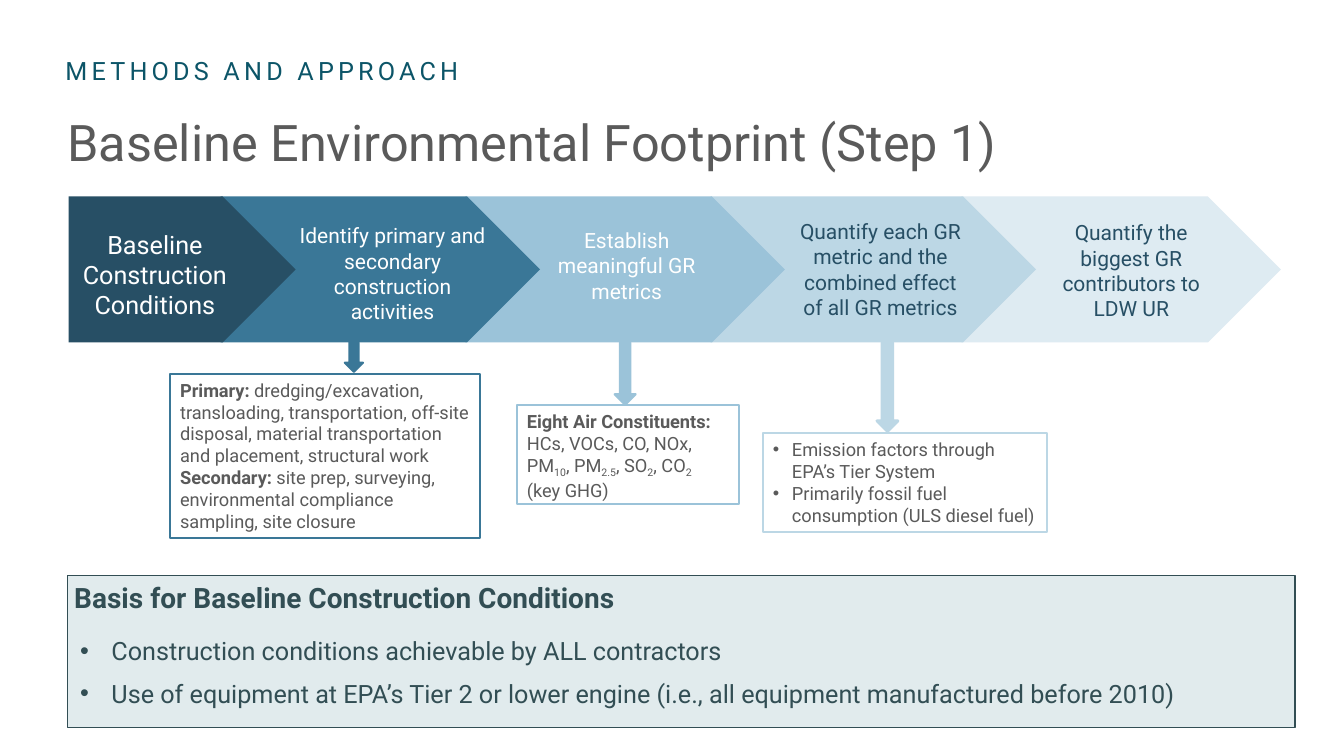
from dataclasses import dataclass

from lxml.etree import SubElement
from pptx import Presentation
from pptx.dml.color import RGBColor
from pptx.enum.shapes import MSO_SHAPE as Shape
from pptx.enum.text import MSO_ANCHOR as Anchor, PP_ALIGN as Align
from pptx.oxml.ns import qn
from pptx.util import Cm, Pt


@dataclass(frozen=True)
class Theme:
    """Colours, type sizes and font of the slide."""
    font: str = "Roboto"
    teal: str = "0C5568"
    grey: str = "5A5A5A"
    white: str = "FFFFFF"
    navy: str = "274F65"
    blue: str = "3A7797"
    sky: str = "9BC3D9"
    mist: str = "BCD7E5"
    ice: str = "DEEBF2"
    slate: str = "324E54"
    panel: str = "E1EBED"
    title: int = 36
    heading: int = 20
    body: int = 18
    step: int = 15
    note: int = 13


THEME = Theme()
SUBSCRIPT = "-25000"
STEP_TOP, STEP_HEIGHT = 4.95, 3.68

STEPS = [
    ("Baseline Construction Conditions", THEME.navy, THEME.white, THEME.body,
     (1.73, 5.72), (1.57, 5.64, 4.67, 2.57)),
    ("Identify primary and secondary construction activities", THEME.blue, THEME.white, THEME.step,
     (5.56, 8.05), (7.24, 5.49, 5.31, 2.82)),
    ("Establish meaningful GR metrics", THEME.sky, THEME.white, THEME.step,
     (11.73, 8.05), (13.23, 5.61, 5.13, 2.18)),
    ("Quantify each GR metric and the combined effect of all GR metrics", THEME.mist, THEME.navy,
     THEME.step, (17.91, 8.2), (19.79, 5.38, 4.8, 2.82)),
    ("Quantify the biggest GR contributors to LDW UR", THEME.ice, THEME.navy, THEME.step,
     (24.23, 8.05), (26.11, 5.41, 4.8, 2.82)),
]

ACTIVITIES = [
    [("Primary: ", "bold"),
     ("dredging/excavation, transloading, transportation, off-site disposal, "
      "material transportation and placement, structural work", "")],
    [("Secondary: ", "bold"),
     ("site prep, surveying, environmental compliance sampling, site closure", "")],
]
CONSTITUENTS = [
    [("Eight Air Constituents:", "bold")],
    [("HCs, VOCs, CO, NOx, PM", ""), ("10", "sub"), (", PM", ""), ("2.5", "sub"),
     (", SO", ""), ("2", "sub"), (", CO", ""), ("2", "sub"), (" (key GHG)", "")],
]
EMISSIONS = [
    [("Emission factors through EPA’s Tier System", "")],
    [("Primarily fossil fuel consumption (ULS diesel fuel)", "")],
]
BASIS = [
    "Construction conditions achievable by ALL contractors",
    "Use of equipment at EPA’s Tier 2 or lower engine "
    "(i.e., all equipment manufactured before 2010)",
]


def rgb(colour):
    """Turn a hex string into a colour."""
    return RGBColor.from_string(colour)


def add_figure(page, kind, place, fill=None, line=None, weight=1.5):
    """Add a preset shape with the given fill and outline."""
    figure = page.shapes.add_shape(kind, *map(Cm, place))
    figure.shadow.inherit = False
    if fill:
        figure.fill.solid()
        figure.fill.fore_color.rgb = rgb(fill)
    else:
        figure.fill.background()
    if line:
        figure.line.color.rgb = rgb(line)
        figure.line.width = Pt(weight)
    else:
        figure.line.fill.background()
    return figure


def prepare_frame(box, anchor=Anchor.TOP, side=0.25, edge=0.13):
    """Set wrapping, anchor and margins of a box and return its text frame."""
    frame = box.text_frame
    frame.word_wrap = True
    frame.vertical_anchor = anchor
    frame.margin_left = frame.margin_right = Cm(side)
    frame.margin_top = frame.margin_bottom = Cm(edge)
    return frame


def add_para(frame, spans, size, colour, align=Align.LEFT, bold=False, indent=0, hanging=0):
    """Write styled spans as the next paragraph, bulleted when it hangs."""
    first = frame.paragraphs[0]
    para = frame.add_paragraph() if first.runs else first
    para.alignment = align
    properties = para._p.get_or_add_pPr()
    properties.set("marL", str(Cm(indent)))
    properties.set("indent", str(-Cm(hanging)))
    if hanging:
        SubElement(properties, qn("a:buFont"), typeface="Arial")
        SubElement(properties, qn("a:buChar"), char="•")
    para.font.name = THEME.font
    para.font.size = Pt(size)
    para.font.bold = bold
    para.font.color.rgb = rgb(colour)
    for text, style in spans:
        span = para.add_run()
        span.text = text
        if style == "bold":
            span.font.bold = True
        elif style == "sub":
            span._r.get_or_add_rPr().set("baseline", SUBSCRIPT)
    return para


def add_label(page, place, text, size, colour, align=Align.LEFT, **frame_options):
    """Add a text box with a single paragraph."""
    frame = prepare_frame(page.shapes.add_textbox(*map(Cm, place)), **frame_options)
    return add_para(frame, [(text, "")], size, colour, align)


def add_step(page, text, fill, ink, size, span, label):
    """Add one pentagon of the process with its label."""
    left, width = span
    add_figure(page, Shape.PENTAGON, (left, STEP_TOP, width, STEP_HEIGHT), fill)
    add_label(page, label, text, size, ink, Align.CENTER)


def add_note(page, place, arrow, colour, paragraphs, hanging=0, weight=1.5):
    """Add an outlined note and the arrow leading to it from its step."""
    frame = prepare_frame(add_figure(page, Shape.RECTANGLE, place, line=colour))
    for spans in paragraphs:
        add_para(frame, spans, THEME.note, THEME.grey, indent=hanging, hanging=hanging)
    left, width, height = arrow
    add_figure(page, Shape.DOWN_ARROW, (left, STEP_TOP + STEP_HEIGHT, width, height),
               colour, colour, weight)


def add_basis(page):
    """Add the panel that states the basis for the baseline."""
    panel = add_figure(page, Shape.RECTANGLE, (1.7, 14.5, 30.94, 3.84),
                       THEME.panel, THEME.slate, 1)
    frame = prepare_frame(panel, side=0)
    heading = add_para(frame, [("Basis for Baseline Construction Conditions", "")],
                       THEME.heading, THEME.slate, bold=True, indent=0.17)
    heading.space_after = Pt(12)
    for text in BASIS:
        para = add_para(frame, [(text, "")], THEME.body, THEME.slate, indent=1.11, hanging=0.79)
        para.space_before = Pt(3)
        para.space_after = Pt(6)


def main():
    """Build the slide and save it."""
    deck = Presentation()
    deck.slide_width, deck.slide_height = Cm(33.87), Cm(19.05)
    page = deck.slides.add_slide(deck.slide_layouts[6])
    header = add_label(page, (1.65, 1.4, 16.51, 0.76), "METHODS AND APPROACH", THEME.body,
                       THEME.teal, anchor=Anchor.MIDDLE, side=0, edge=0)
    header.runs[0]._r.get_or_add_rPr().set("spc", "300")
    add_label(page, (1.7, 2.62, 30.48, 1.9), "Baseline Environmental Footprint (Step 1)",
              THEME.title, THEME.grey, anchor=Anchor.MIDDLE, side=0)
    for step in reversed(STEPS):
        add_step(page, *step)
    add_note(page, (4.29, 9.42, 7.8, 4.14), (8.69, 0.46, 0.74), THEME.blue, ACTIVITIES)
    add_note(page, (13.03, 10.21, 5.59, 2.49), (15.49, 0.53, 1.57), THEME.sky, CONSTITUENTS)
    add_note(page, (19.23, 10.92, 7.16, 2.49), (22.1, 0.53, 2.24), THEME.mist, EMISSIONS,
             hanging=0.48, weight=2)
    add_basis(page)
    deck.save("out.pptx")


if __name__ == "__main__":
    main()
